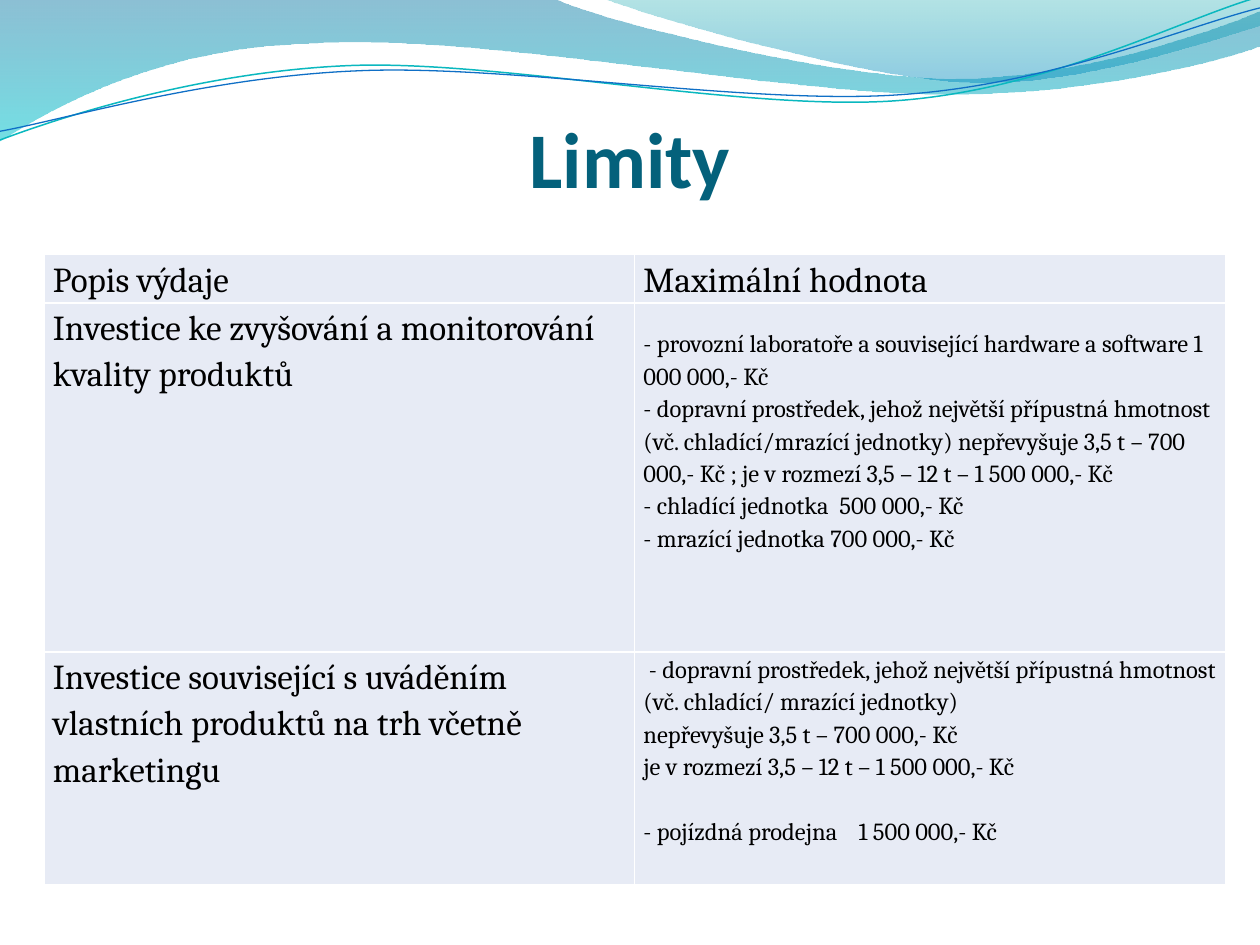
from dataclasses import dataclass

from lxml import etree
from pptx import Presentation
from pptx.dml.color import RGBColor
from pptx.enum.text import MSO_ANCHOR, PP_ALIGN
from pptx.oxml.ns import qn
from pptx.util import Pt

BOTTOM = MSO_ANCHOR.BOTTOM
CENTER = PP_ALIGN.CENTER


@dataclass(frozen=True)
class Theme:
    title_font: str = "Calibri"
    body_font: str = "Cambria"
    title_size: float = 45
    label_size: float = 20
    detail_size: float = 14
    title: str = "04617B"
    text: str = "000000"
    cell: str = "E7EBF5"
    border: str = "FFFFFF"
    teal_line: str = "0AB8BF"
    blue_line: str = "0F6FC6"
    wave: tuple = (("0074A1", 45), ("00C6CF", 55))
    crest: tuple = (("00A1A9", 30), ("008BBF", 45))


THEME = Theme()

WAVE = [
    [(0, 0)],
    [(317, -0.7)],
    [(343, 12), (478, 45), (546, 45)],
    [(614, 45), (690, 19), (720, 6.5)],
    [(721, 26)],
    [(708, 32), (626, 55), (537, 54)],
    [(448, 54), (275, 20), (185, 24.5)],
    [(93, 26), (33, 60), (-0.7, 81)],
]
CREST = [
    [(345, -0.7)],
    [(366, 8), (491, 44.5), (554, 47)],
    [(616, 49.5), (692, 23), (720, 15)],
    [(720, -0.7)],
]
TEAL_CURVE = [
    [(0, 80)],
    [(34.5, 67), (114, 41), (199.5, 37.5)],
    [(284.5, 34), (427, 64), (513, 57.5)],
    [(600, 51), (675, 11), (718.5, -1.5)],
]
BLUE_CURVE = [
    [(0, 75)],
    [(34, 69), (118, 44), (204, 40.5)],
    [(290, 36.5), (430, 60.5), (516, 54)],
    [(602, 48), (677.5, 15), (720, 4.5)],
]

HEADERS = ["Popis výdaje", "Maximální hodnota"]
QUALITY = "Investice ke zvyšování a monitorování kvality produktů"
QUALITY_LIMITS = [
    ("- provozní laboratoře a související hardware a software 1 000 000,- Kč", {}),
    ("- dopravní prostředek, jehož největší přípustná hmotnost (vč. chladící/mrazící "
     "jednotky) nepřevyšuje 3,5 t – 700 000,- Kč ; je v rozmezí 3,5 – 12 t – 1 500 000,- Kč", {}),
    ("- chladící jednotka\t500 000,- Kč", {"tab": 112}),
    ("- mrazící jednotka 700 000,- Kč", {}),
]
MARKETING = "Investice související s uváděním vlastních produktů na trh včetně marketingu"
MARKETING_LIMITS = [
    (" - dopravní prostředek, jehož největší přípustná hmotnost "
     "(vč. chladící/ mrazící jednotky)", {}),
    ("nepřevyšuje 3,5 t – 700 000,- Kč", {}),
    ("je v rozmezí 3,5 – 12 t – 1 500 000,- Kč", {}),
    ("- pojízdná prodejna\t1 500 000,- Kč", {"tab": 123, "before": 18.5}),
]


def rgb(value):
    return RGBColor.from_string(value)


def write(p, text, size, font=THEME.body_font, color=THEME.text, bold=False,
          align=None, spacing=None, before=None, tab=None):
    r = p.add_run()
    r.text = text
    r.font.size = Pt(size)
    r.font.name = font
    r.font.bold = bold
    r.font.color.rgb = rgb(color)
    p.alignment = align
    p.line_spacing = spacing
    if before:
        p.space_before = Pt(before)
    if tab:
        tabs = etree.SubElement(p._p.get_or_add_pPr(), qn("a:tabLst"))
        etree.SubElement(tabs, qn("a:tab"), pos=str(Pt(tab)), algn="l")


def bend_segments(sp, segments):
    steps = iter(list(sp._element.spPr.iter(qn("a:lnTo"))))
    for segment in segments[1:]:
        lines = [next(steps) for _ in segment]
        if len(lines) == 3:
            curve = etree.Element(qn("a:cubicBezTo"))
            lines[0].addprevious(curve)
            for line in lines:
                curve.append(line[0])
                line.getparent().remove(line)


def add_outline(slide, segments, close):
    points = [(Pt(x), Pt(y)) for segment in segments for x, y in segment]
    builder = slide.shapes.build_freeform(*points[0])
    builder.add_line_segments(points[1:], close=close)
    sp = builder.convert_to_shape()
    sp.shadow.inherit = False
    bend_segments(sp, segments)
    return sp


def add_wave(slide, segments, colors):
    sp = add_outline(slide, segments, True)
    sp.line.fill.background()
    sp.fill.gradient()
    sp.fill.gradient_angle = 270
    for stop, position, (color, _) in zip(sp.fill.gradient_stops, (0, 1), colors):
        stop.position = position
        stop.color.rgb = rgb(color)
    for node, (_, opacity) in zip(sp._element.spPr.iter(qn("a:srgbClr")), colors):
        etree.SubElement(node, qn("a:alpha"), val=str(opacity * 1000))


def add_curve(slide, segments, color, width):
    sp = add_outline(slide, segments, False)
    sp.fill.background()
    sp.line.color.rgb = rgb(color)
    sp.line.width = Pt(width)


def add_title(slide, text):
    sp = slide.shapes.add_textbox(Pt(36), Pt(55.5), Pt(648), Pt(61))
    tf = sp.text_frame
    tf.word_wrap = True
    tf.vertical_anchor = BOTTOM
    tf.margin_left = tf.margin_right = tf.margin_bottom = 0
    tf.margin_top = Pt(3.6)
    write(tf.paragraphs[0], text, THEME.title_size, font=THEME.title_font,
          color=THEME.title, bold=True, align=CENTER)


def fill_cell(cell, paragraphs, size, top=0):
    cell.fill.solid()
    cell.fill.fore_color.rgb = rgb(THEME.cell)
    cell.margin_left = cell.margin_right = Pt(5)
    cell.margin_top, cell.margin_bottom = Pt(top), 0
    tcPr = cell._tc.get_or_add_tcPr()
    for i, side in enumerate(("lnL", "lnR", "lnT", "lnB")):
        ln = etree.Element(qn(f"a:{side}"), w=str(Pt(1)))
        solid = etree.SubElement(ln, qn("a:solidFill"))
        etree.SubElement(solid, qn("a:srgbClr"), val=THEME.border)
        tcPr.insert(i, ln)
    tf = cell.text_frame
    for i, (text, options) in enumerate(paragraphs):
        p = tf.add_paragraph() if i else tf.paragraphs[0]
        write(p, text, size, spacing=1.15, **options)


def add_limits_table(slide):
    heights = (22.5, 199.5, 133)
    frame = slide.shapes.add_table(3, 2, Pt(25.2), Pt(145.5), Pt(675), Pt(sum(heights)))
    table = frame.table
    table.first_row = table.horz_banding = False
    for row, height in zip(table.rows, heights):
        row.height = Pt(height)
    for col, text in enumerate(HEADERS):
        fill_cell(table.cell(0, col), [(text, {})], THEME.label_size)
    groups = ((QUALITY, QUALITY_LIMITS, 13.5), (MARKETING, MARKETING_LIMITS, 0))
    for row, (label, limits, top) in enumerate(groups, start=1):
        fill_cell(table.cell(row, 0), [(label, {})], THEME.label_size)
        fill_cell(table.cell(row, 1), limits, THEME.detail_size, top=top)
    frame.height = Pt(360)


def main():
    prs = Presentation()
    prs.slide_width, prs.slide_height = Pt(720), Pt(540)
    slide = prs.slides.add_slide(prs.slide_layouts[6])
    add_wave(slide, WAVE, THEME.wave)
    add_wave(slide, CREST, THEME.crest)
    add_curve(slide, TEAL_CURVE, THEME.teal_line, 0.85)
    add_curve(slide, BLUE_CURVE, THEME.blue_line, 0.75)
    add_title(slide, "Limity")
    add_limits_table(slide)
    prs.save("out.pptx")


if __name__ == "__main__":
    main()
